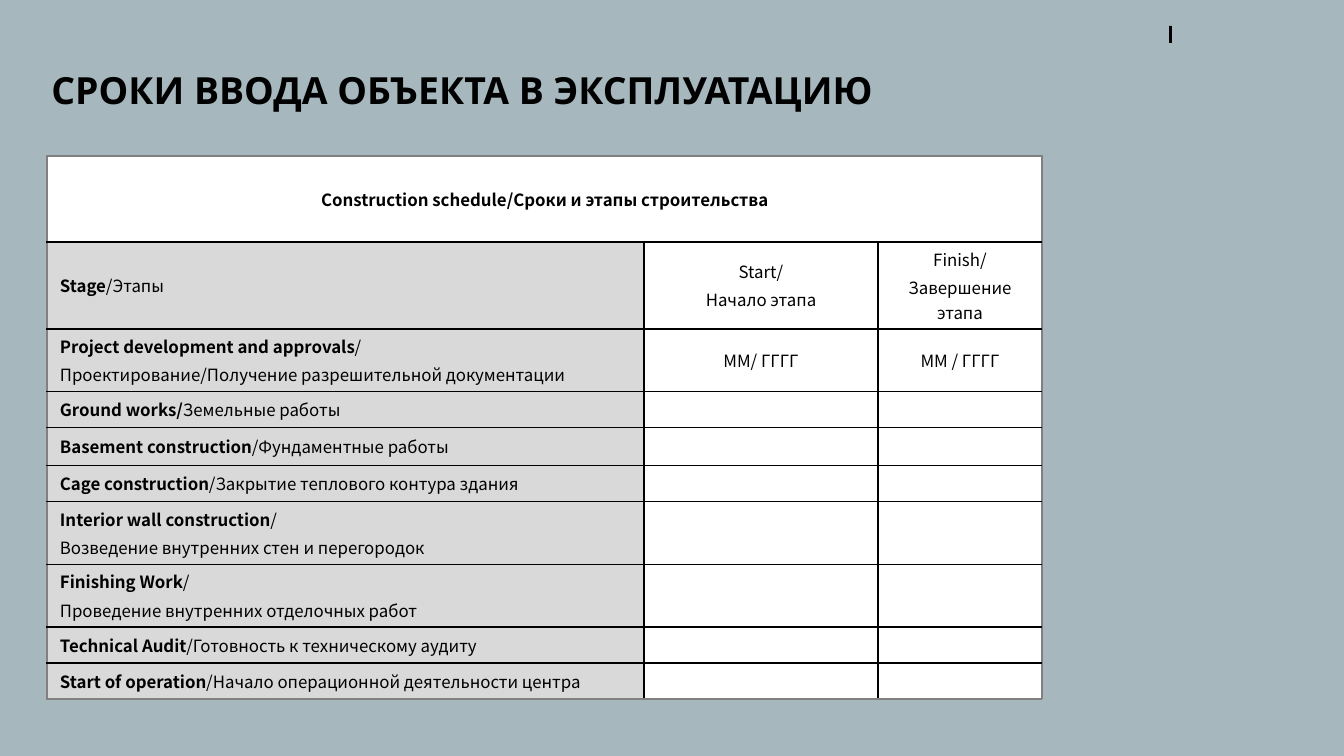
from dataclasses import dataclass

from lxml.etree import SubElement
from pptx import Presentation
from pptx.dml.color import RGBColor
from pptx.enum.shapes import MSO_SHAPE
from pptx.enum.text import MSO_ANCHOR, MSO_AUTO_SIZE, PP_ALIGN
from pptx.oxml.ns import qn
from pptx.util import Emu, Pt


@dataclass(frozen=True)
class Theme:
    back: str = "A6B7BE"
    ink: str = "000000"
    edge: str = "808080"
    label: str = "D9D9D9"
    plain: str = "FFFFFF"
    head: str = "Noto Sans"
    body: str = "Noto Sans CJK SC"
    big: int = 20
    small: int = 9
    gap: int = 2


THEME = Theme()
COLS = [597, 234, 164]
ROWS = [86, 87, 62, 36, 38, 36, 63, 62, 36, 36]

# Each cell is a list of paragraphs; each paragraph is (bold part, plain part).
TITLE = [("Construction schedule/Сроки и этапы строительства", "")]
HEADS = [
    [("Stage", "/Этапы")],
    [("", "Start/"), ("", "Начало этапа")],
    [("", "Finish/"), ("", "Завершение этапа")],
]
STAGES = [
    [("Project development and approvals", "/"),
     ("", "Проектирование/Получение разрешительной документации")],
    [("Ground works/", "Земельные работы")],
    [("Basement construction", "/Фундаментные работы")],
    [("Cage construction", "/Закрытие теплового контура здания")],
    [("Interior wall construction", "/"),
     ("", "Возведение внутренних стен и перегородок")],
    [("Finishing Work", "/"),
     ("", "Проведение внутренних отделочных работ")],
    [("Technical Audit", "/Готовность к техническому аудиту")],
    [("Start of operation", "/Начало операционной деятельности центра")],
]
DATES = [[("", "ММ/ ГГГГ")], [("", "ММ / ГГГГ")]]


def px(num):
    return Emu(round(num * 914400 / 134.4))


def box(*nums):
    return [px(num) for num in nums]


def color(code):
    return RGBColor.from_string(code)


def style(item, **form):
    for name, value in form.items():
        setattr(item, name, value)


def add_run(para, text, face, size, bold):
    run = para.add_run()
    run.text = text
    style(run.font, name=face, size=Pt(size), bold=bold)
    run.font.color.rgb = color(THEME.ink)


def add_title(slide, text):
    title = slide.shapes.title
    left, top, width, height = box(38, 60, 1027, 95)
    style(title, left=left, top=top, width=width, height=height)
    frame = title.text_frame
    style(frame, word_wrap=True, auto_size=MSO_AUTO_SIZE.NONE,
          vertical_anchor=MSO_ANCHOR.TOP)
    para = frame.paragraphs[0]
    para.alignment = PP_ALIGN.LEFT
    add_run(para, text, THEME.head, THEME.big, True)


def add_mark(slide):
    mark = slide.shapes.add_shape(MSO_SHAPE.RECTANGLE, *box(1169, 26, 3, 17))
    mark.shadow.inherit = False
    mark.fill.solid()
    mark.fill.fore_color.rgb = color(THEME.ink)
    mark.line.fill.background()


def set_edges(cell, row, col):
    """Grey lines around the table, black lines between its cells."""
    outer = {
        "lnL": row == 0 or col == 0,
        "lnR": row == 0 or col == len(COLS) - 1,
        "lnT": row == 0,
        "lnB": row == len(ROWS) - 1,
    }
    props = cell._tc.get_or_add_tcPr()
    for tag, grey in outer.items():
        line = SubElement(props, qn("a:" + tag), w=str(Pt(0.75 if grey else 1)))
        fill = SubElement(line, qn("a:solidFill"))
        SubElement(fill, qn("a:srgbClr"), val=THEME.edge if grey else THEME.ink)


def fill_cell(cell, paras, align):
    frame = cell.text_frame
    for index, parts in enumerate(paras):
        para = frame.add_paragraph() if index else frame.paragraphs[0]
        para.alignment = align
        if index:
            para.space_before = Pt(THEME.gap)
        for text, bold in zip(parts, (True, False)):
            if text:
                add_run(para, text, THEME.body, THEME.small, bold)
    if not paras:
        SubElement(frame.paragraphs[0]._p, qn("a:endParaRPr"),
                   sz=str(THEME.small * 100))


def add_plan(slide):
    blank = [[], []]
    data = [[TITLE, *blank], HEADS]
    data += [[stage, *(blank if index else DATES)]
             for index, stage in enumerate(STAGES)]
    table = slide.shapes.add_table(
        len(ROWS), len(COLS), *box(47, 156, sum(COLS), sum(ROWS))).table
    style(table, first_row=False, horz_banding=False)
    for col, width in zip(table.columns, COLS):
        col.width = px(width)
    for row, height in zip(table.rows, ROWS):
        row.height = px(height)
    for row, items in enumerate(data):
        for col, paras in enumerate(items):
            cell = table.cell(row, col)
            label = row > 0 and col == 0
            style(cell, vertical_anchor=MSO_ANCHOR.MIDDLE,
                  margin_left=px(13), margin_right=px(13),
                  margin_top=px(5), margin_bottom=px(5))
            set_edges(cell, row, col)
            cell.fill.solid()
            cell.fill.fore_color.rgb = color(THEME.label if label else THEME.plain)
            fill_cell(cell, paras, PP_ALIGN.LEFT if label else PP_ALIGN.CENTER)
    table.cell(0, 0).merge(table.cell(0, len(COLS) - 1))


def main():
    deck = Presentation()
    style(deck, slide_width=px(1344), slide_height=px(756))
    slide = deck.slides.add_slide(deck.slide_layouts[5])
    slide.background.fill.solid()
    slide.background.fill.fore_color.rgb = color(THEME.back)
    add_mark(slide)
    add_plan(slide)
    add_title(slide, "СРОКИ ВВОДА ОБЪЕКТА В ЭКСПЛУАТАЦИЮ")
    deck.save("out.pptx")


if __name__ == "__main__":
    main()
